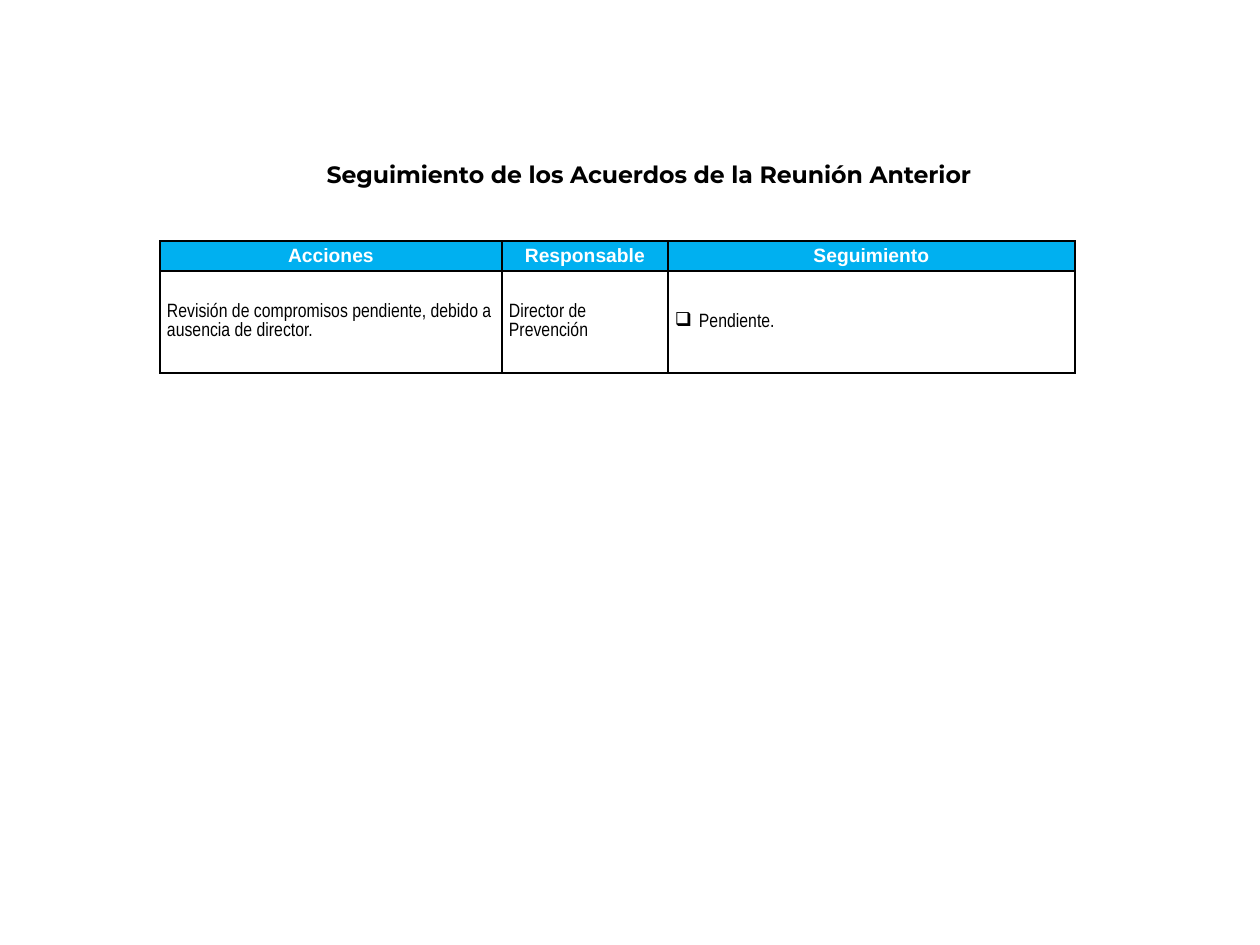
from dataclasses import dataclass

from lxml.etree import SubElement
from pptx import Presentation
from pptx.dml.color import RGBColor
from pptx.enum.text import MSO_ANCHOR, MSO_AUTO_SIZE, PP_ALIGN
from pptx.oxml.ns import qn
from pptx.util import Pt

EMU_PER_PX = 914400 / 126


@dataclass(frozen=True)
class Theme:
    black: RGBColor = RGBColor(0, 0, 0)
    white: RGBColor = RGBColor(255, 255, 255)
    header_fill: RGBColor = RGBColor(0, 176, 240)
    title_font: str = "Montserrat"
    header_font: str = "Arial"
    body_font: str = "Arial Narrow"
    title_size: float = 13.5
    table_size: float = 11


theme = Theme()


def px(length):
    return round(length * EMU_PER_PX)


def format_runs(paragraph, name, size, color, bold):
    for run in paragraph.runs:
        run.font.name = name
        run.font.size = Pt(size)
        run.font.color.rgb = color
        run.font.bold = bold


presentation = Presentation()
presentation.slide_width, presentation.slide_height = px(1260), px(945)
slide = presentation.slides.add_slide(presentation.slide_layouts[5])

title = slide.shapes.title
title.left, title.top, title.width, title.height = px(266), px(136), px(766), px(77)
title.text_frame.text = "Seguimiento de los Acuerdos de la Reunión Anterior"
title.text_frame.auto_size = MSO_AUTO_SIZE.NONE
title.text_frame.vertical_anchor = MSO_ANCHOR.MIDDLE
title_paragraph = title.text_frame.paragraphs[0]
title_paragraph.alignment = PP_ALIGN.CENTER
format_runs(title_paragraph, theme.title_font, theme.title_size, theme.black, True)

rows = [
    ["Acciones", "Responsable", "Seguimiento"],
    [
        "Revisión de compromisos pendiente, debido a ausencia de director.",
        "Director de Prevención",
        "Pendiente.",
    ],
]
column_widths = [342, 166, 407]
row_heights = [30, 102]

table = slide.shapes.add_table(
    len(rows), len(column_widths), px(160), px(241),
    px(sum(column_widths)), px(sum(row_heights)),
).table
table.first_row = False
table.horz_banding = False
for column, width in zip(table.columns, column_widths):
    column.width = px(width)
for row, height in zip(table.rows, row_heights):
    row.height = px(height)

for row_index, texts in enumerate(rows):
    is_header = row_index == 0
    for column_index, text in enumerate(texts):
        cell = table.cell(row_index, column_index)
        cell.text_frame.text = text
        cell.vertical_anchor = MSO_ANCHOR.MIDDLE
        cell.margin_left = cell.margin_right = px(2 if is_header else 7)
        cell.margin_top = cell.margin_bottom = 0

        # Borders must come before the fill in the cell properties.
        cell_properties = cell._tc.get_or_add_tcPr()
        for side in ("lnL", "lnR", "lnT", "lnB"):
            line = SubElement(cell_properties, qn(f"a:{side}"), w=str(Pt(1)))
            line_fill = SubElement(line, qn("a:solidFill"))
            SubElement(line_fill, qn("a:srgbClr"), val=str(theme.black))
        cell.fill.solid()
        cell.fill.fore_color.rgb = theme.header_fill if is_header else theme.white

        paragraph = cell.text_frame.paragraphs[0]
        paragraph.alignment = PP_ALIGN.CENTER if is_header else PP_ALIGN.LEFT
        format_runs(
            paragraph,
            theme.header_font if is_header else theme.body_font,
            theme.table_size,
            theme.white if is_header else theme.black,
            is_header,
        )

status = table.cell(1, 2).text_frame.paragraphs[0]
status.space_after = Pt(6)
status_properties = status._p.get_or_add_pPr()
status_properties.set("marL", str(px(24)))
status_properties.set("indent", str(px(-24)))
bullet_color = SubElement(status_properties, qn("a:buClr"))
SubElement(bullet_color, qn("a:srgbClr"), val=str(theme.black))
SubElement(status_properties, qn("a:buChar"), char="❑")

presentation.save("out.pptx")
